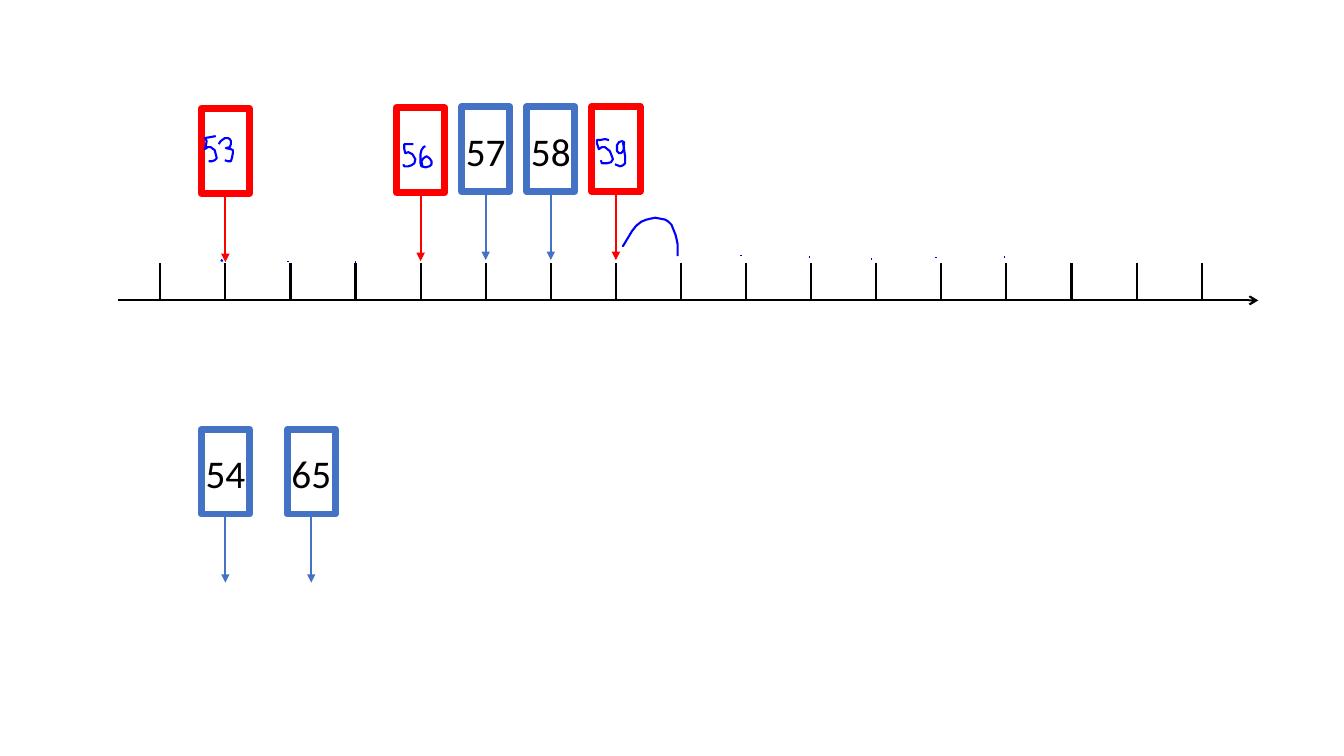
from lxml import etree
from pptx import Presentation
from pptx.dml.color import RGBColor
from pptx.enum.shapes import MSO_CONNECTOR, MSO_SHAPE
from pptx.enum.text import MSO_AUTO_SIZE, PP_ALIGN
from pptx.oxml.ns import qn
from pptx.util import Inches, Pt

STRAIGHT = MSO_CONNECTOR.STRAIGHT
RECT = MSO_SHAPE.RECTANGLE
CENTER = PP_ALIGN.CENTER
GROW = MSO_AUTO_SIZE.SHAPE_TO_FIT_TEXT

BLUE, RED, INK, BLACK = "4472C4", "FF0000", "0000FF", "000000"
FIRST_TICK, STEP, TICKS = 1.59, 0.6455, 17
AXIS_Y, TICK_H = 2.98, 0.37
CARD_W, CARD_H, ARROW_H = 0.48, 0.84, 0.68
LABEL_W, LABEL_H = 0.88, 0.57
UNIT = Inches(0.01)

CARDS = [
    (5, 1.06, BLUE, "57"),
    (6, 1.06, BLUE, "58"),
    (4, 1.07, RED, None),
    (1, 1.08, RED, None),
    (7, 1.06, RED, None),
    (2.32, 4.26, BLUE, "65"),
    (1, 4.26, BLUE, "54"),
]

HANDWRITTEN_NUMBERS = {
    "53": [
        [(214, 135), (209, 136), (203, 137), (204, 138), (205, 140), (204, 145), (203, 148),
         (206, 146), (209, 146), (213, 149), (214, 153), (215, 157), (213, 159), (210, 160),
         (207, 160)],
        [(217, 143), (219, 140), (223, 137), (226, 137), (228, 138), (229, 140), (229, 143),
         (228, 146), (224, 147), (229, 148), (231, 149), (231, 152), (230, 157), (229, 160),
         (226, 160), (223, 159)],
    ],
    "56": [
        [(410, 143), (405, 143), (401, 143), (401, 148), (402, 152), (405, 151), (409, 153),
         (412, 158), (411, 162), (408, 164), (405, 165), (401, 165), (400, 163)],
        [(422, 145), (420, 146), (418, 149), (417, 153), (417, 162), (418, 165), (422, 166),
         (426, 165), (428, 163), (428, 160), (426, 157), (423, 155), (420, 157), (418, 160),
         (419, 165)],
    ],
    "59": [
        [(604, 139), (600, 138), (595, 139), (592, 139), (592, 142), (594, 148), (597, 146),
         (600, 146), (605, 150), (608, 158), (606, 161), (602, 162), (597, 162), (596, 159)],
        [(619, 144), (619, 141), (617, 140), (614, 141), (612, 144), (612, 150), (614, 152),
         (616, 152), (618, 150), (619, 146), (618, 142), (619, 148), (620, 155), (620, 162),
         (618, 164), (615, 165), (610, 163)],
    ],
}

JUMP = [(617, 244), (618, 244), (621, 239), (627, 229), (631, 224), (636, 220), (641, 218),
        (645, 217), (650, 216), (655, 217), (660, 218), (663, 220), (666, 223), (668, 228),
        (670, 233), (671, 237), (672, 242), (672, 254)]

PEN_MARKS = [
    [(353, 260), (352, 260)],
    [(286, 259), (286, 260)],
    [(219, 258), (221, 259)],
    [(735, 253), (735, 254)],
    [(802, 255), (803, 255)],
    [(864, 257), (865, 257)],
    [(928, 255), (928, 256)],
    [(996, 255), (997, 255)],
]


def rgb(value):
    return RGBColor.from_string(value)


def tick_x(column):
    return FIRST_TICK + column * STEP


def set_line(shape, color, width):
    shape.line.color.rgb = rgb(color)
    shape.line.width = Pt(width)


def add_line(shapes, x1, y1, x2, y2, color, head=None):
    line = shapes.add_connector(STRAIGHT, Inches(x1), Inches(y1), Inches(x2), Inches(y2))
    set_line(line, color, 1.5)
    etree.SubElement(line._element.spPr, qn("a:effectLst"))
    if head:
        etree.SubElement(line.line._get_or_add_ln(), qn("a:tailEnd"), type=head)
    return line


def add_label(shapes, text, center, top):
    tb = shapes.add_textbox(Inches(center - LABEL_W / 2), Inches(top),
                            Inches(LABEL_W), Inches(LABEL_H))
    tf = tb.text_frame
    tf.word_wrap = True
    tf.auto_size = GROW
    p = tf.paragraphs[0]
    p.text = text
    p.alignment = CENTER
    p.font.name = "Calibri"
    p.font.size = Pt(28)
    p.font.color.rgb = rgb(BLACK)


def add_card(s, column, top, color, text):
    shapes = s.shapes.add_group_shape().shapes
    center, bottom = tick_x(column), top + CARD_H
    card = shapes.add_shape(RECT, Inches(center - CARD_W / 2), Inches(top),
                            Inches(CARD_W), Inches(CARD_H))
    card.shadow.inherit = False
    card.fill.background()
    set_line(card, color, 5)
    if text:
        add_label(shapes, text, center, top + 0.15)
    arrow = add_line(shapes, center, bottom, center, bottom + ARROW_H, color, "triangle")
    arrow.begin_connect(card, 2)


def add_number_line(s):
    shapes = s.shapes.add_group_shape().shapes
    add_line(shapes, 1.17, AXIS_Y, 12.48, AXIS_Y, BLACK, "arrow")
    for column in range(TICKS):
        x = tick_x(column)
        add_line(shapes, x, AXIS_Y, x, AXIS_Y - TICK_H, BLACK)


def add_stroke(shapes, points):
    builder = shapes.build_freeform(*points[0], scale=UNIT)
    builder.add_line_segments(points[1:], close=False)
    stroke = builder.convert_to_shape()
    stroke.shadow.inherit = False
    stroke.fill.background()
    set_line(stroke, INK, 1.5)


def main():
    prs = Presentation()
    prs.slide_width, prs.slide_height = Inches(13.33), Inches(7.5)
    s = prs.slides.add_slide(prs.slide_layouts[6])
    add_number_line(s)
    for card in CARDS:
        add_card(s, *card)
    for strokes in HANDWRITTEN_NUMBERS.values():
        digits = s.shapes.add_group_shape().shapes
        for points in strokes:
            add_stroke(digits, points)
    for points in [JUMP, *PEN_MARKS]:
        add_stroke(s.shapes, points)
    prs.save("out.pptx")


if __name__ == "__main__":
    main()
